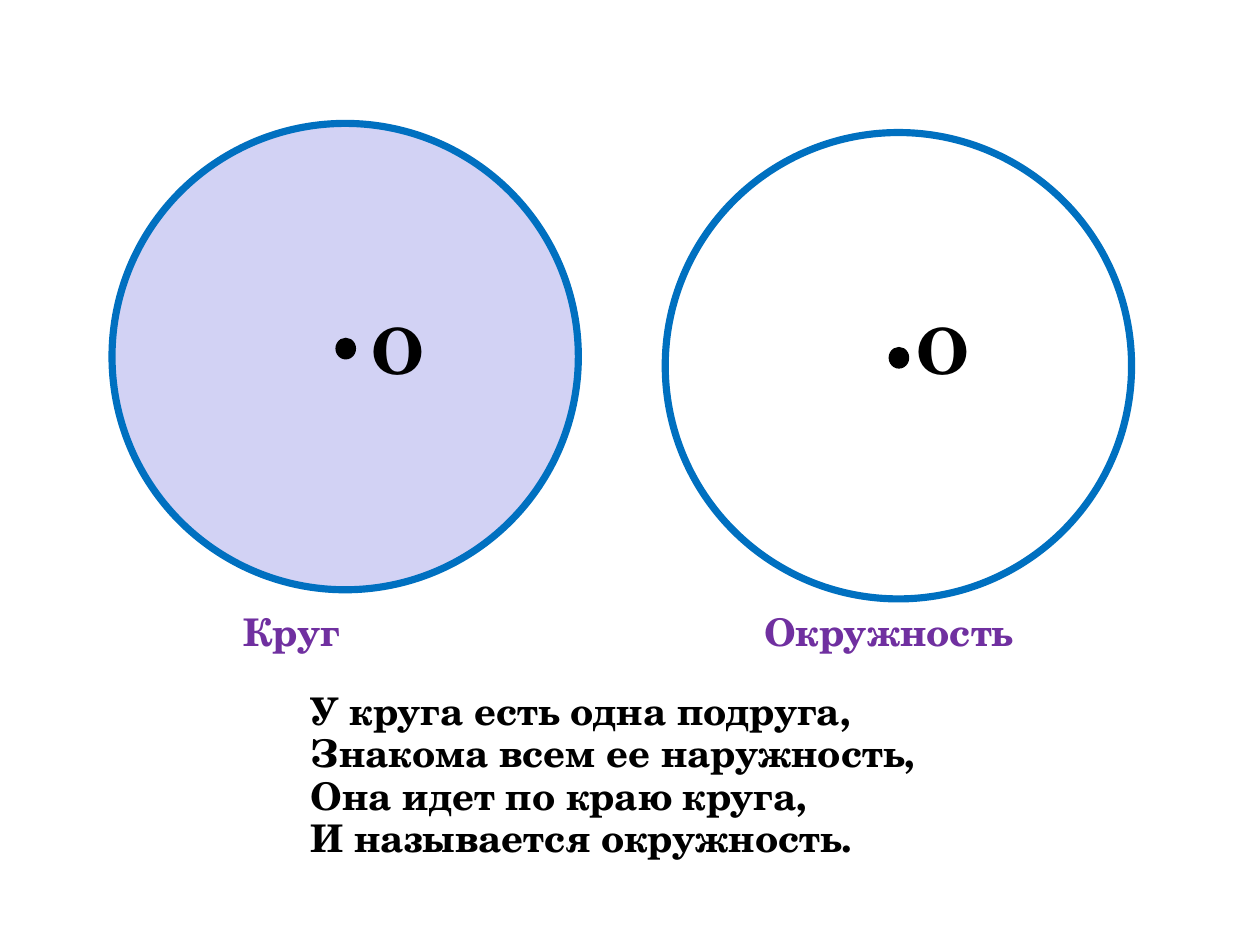
"""Build a slide comparing a disc with a circle, with a short rhyme."""
from pptx import Presentation
from pptx.dml.color import RGBColor
from pptx.enum import shapes, text
from pptx.util import Inches, Pt

BLUE = RGBColor(0x00, 0x70, 0xC0)
LILAC = RGBColor(0xD2, 0xD2, 0xF4)
PURPLE = RGBColor(0x70, 0x30, 0xA0)
BLACK = RGBColor(0x00, 0x00, 0x00)
FONT = "TeX Gyre Schola"
DIAMETER = 4.08
CM_PER_INCH = 2.54

RHYME = [
    "У круга есть одна подруга,",
    "Знакома всем ее наружность,",
    "Она идет по краю круга,",
    "И называется окружность.",
]

prs = Presentation()
prs.slide_width = Inches(28 / CM_PER_INCH)
prs.slide_height = Inches(21 / CM_PER_INCH)
slide = prs.slides.add_slide(prs.slide_layouts[6])


def add_ellipse(left, top, width, height, fill, line, weight):
    ellipse = slide.shapes.add_shape(
        shapes.MSO_SHAPE.OVAL, Inches(left), Inches(top), Inches(width), Inches(height))
    ellipse.shadow.inherit = False
    if fill is None:
        ellipse.fill.background()
    else:
        ellipse.fill.solid()
        ellipse.fill.fore_color.rgb = fill
    ellipse.line.color.rgb = line
    ellipse.line.width = Pt(weight)


def add_text(lines, left, top, width, height, size, color, align, inset_x=0.11, inset_y=0.06):
    frame = slide.shapes.add_textbox(
        Inches(left), Inches(top), Inches(width), Inches(height)).text_frame
    frame.word_wrap = True
    frame.auto_size = text.MSO_AUTO_SIZE.SHAPE_TO_FIT_TEXT
    frame.margin_left = frame.margin_right = Inches(inset_x)
    frame.margin_top = frame.margin_bottom = Inches(inset_y)
    frame.text = "\n".join(lines)
    for paragraph in frame.paragraphs:
        paragraph.alignment = align
        paragraph.line_spacing = 0.93
        paragraph.font.name = FONT
        paragraph.font.size = Pt(size)
        paragraph.font.bold = True
        paragraph.font.color.rgb = color


figures = [
    ("Круг", 0.98, 1.08, LILAC, 1.68, 1.74, 3.09),
    ("Окружность", 5.82, 1.16, None, 5.43, 4.69, 7.86),
]
CENTER = text.PP_ALIGN.CENTER
for caption, left, top, fill, caption_left, caption_width, letter_left in figures:
    add_ellipse(left, top, DIAMETER, DIAMETER, fill, BLUE, 4.5)
    add_ellipse(left + 1.96, top + 1.88, 0.17, 0.18, BLACK, BLACK, 0.75)
    add_text([caption], caption_left, 5.3, caption_width, 0.49, 24, PURPLE, CENTER)
    add_text(["O"], letter_left, 2.72, 0.78, 0.74, 40, BLACK, CENTER)

add_text(RHYME, 2.62, 6, 5.7, 1.6, 24, BLACK, text.PP_ALIGN.LEFT, 0.1, 0.05)

prs.save("out.pptx")
